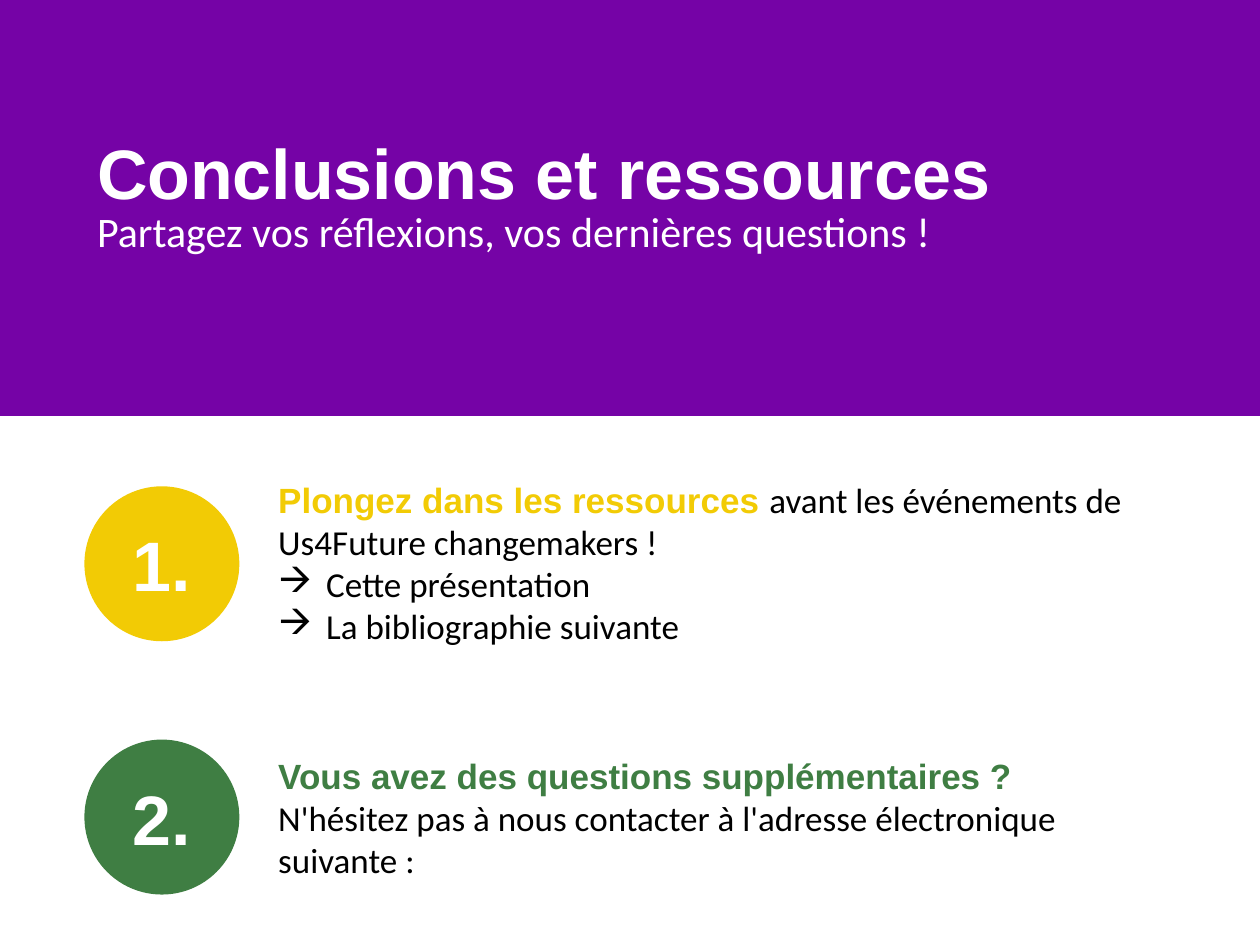
from dataclasses import dataclass

from lxml import etree
from pptx import Presentation
from pptx.dml.color import RGBColor
from pptx.enum.shapes import MSO_SHAPE
from pptx.enum.text import MSO_ANCHOR, MSO_AUTO_SIZE, PP_ALIGN
from pptx.oxml.ns import qn
from pptx.util import Pt

RECTANGLE, OVAL = MSO_SHAPE.RECTANGLE, MSO_SHAPE.OVAL
MIDDLE, TOP = MSO_ANCHOR.MIDDLE, MSO_ANCHOR.TOP
LEFT, CENTER = PP_ALIGN.LEFT, PP_ALIGN.CENTER
NO_FIT, GROW = MSO_AUTO_SIZE.NONE, MSO_AUTO_SIZE.SHAPE_TO_FIT_TEXT
PX = 9144  # 100 px to the inch


@dataclass(frozen=True)
class Theme:
    purple: str = "7503A6"
    yellow: str = "F2CB05"
    green: str = "3F7E43"
    white: str = "FFFFFF"
    black: str = "000000"
    heading: str = "Arial"
    text: str = "Calibri"
    big: int = 40
    subtitle: int = 24
    body: int = 20


theme = Theme()


def px(*lengths):
    return [length * PX for length in lengths]


def add_run(paragraph, text, size, color, bold=False):
    run = paragraph.add_run()
    run.text = text
    run.font.name = theme.heading if bold else theme.text
    run.font.size = Pt(size)
    run.font.bold = bold
    run.font.color.rgb = RGBColor.from_string(color)


prs = Presentation()
prs.slide_width, prs.slide_height = px(1000, 750)
slide = prs.slides.add_slide(prs.slide_layouts[1])
shapes = slide.shapes

# Purple header band, behind the title
band = shapes.add_shape(RECTANGLE, *px(0, 0, 1000, 328))
band.shadow.inherit = False
band.fill.solid()
band.fill.fore_color.rgb = RGBColor.from_string(theme.purple)
band.line.color.rgb = RGBColor.from_string(theme.purple)
band.line.width = Pt(3)
shapes._spTree.insert(2, band._element)

# Title and subtitle
headers = [
    (shapes.title, (67, 68, 846, 145), MIDDLE,
     "Conclusions et ressources", theme.big, True),
    (slide.placeholders[1], (67, 163, 846, 50), TOP,
     "Partagez vos réflexions, vos dernières questions !", theme.subtitle, False),
]
for header, box, anchor, text, size, bold in headers:
    header.left, header.top, header.width, header.height = px(*box)
    frame = header.text_frame
    frame.auto_size = NO_FIT
    frame.vertical_anchor = anchor
    line = frame.paragraphs[0]
    line.alignment = LEFT
    line.line_spacing = 0.9
    line.space_before = Pt(0)
    add_run(line, text, size, theme.white, bold)
    properties = line._p.get_or_add_pPr()
    properties.set("marL", "0")
    properties.set("indent", "0")
    etree.SubElement(properties, qn("a:buNone"))

# Numbered steps: each paragraph is (is bulleted, [(text, is highlighted)])
steps = [
    ("1.", theme.yellow, 386, 375, 145, [
        (False, [("Plongez dans les ressources ", True),
                 ("avant les événements de Us4Future changemakers !", False)]),
        (True, [("Cette présentation", False)]),
        (True, [("La bibliographie suivante", False)]),
    ]),
    ("2.", theme.green, 587, 594, 77, [
        (False, [("Vous avez des questions supplémentaires ?", True)]),
        (False, [("N'hésitez pas à nous contacter à l'adresse électronique "
                  "suivante :", False)]),
    ]),
]
for number, accent, circle_top, text_top, text_height, paragraphs in steps:
    circle = shapes.add_shape(OVAL, *px(67, circle_top, 123, 123))
    circle.shadow.inherit = False
    circle.fill.solid()
    circle.fill.fore_color.rgb = RGBColor.from_string(accent)
    circle.line.fill.background()
    circle.text_frame.vertical_anchor = MIDDLE
    label = circle.text_frame.paragraphs[0]
    label.alignment = CENTER
    add_run(label, number, theme.big, theme.white, True)

    advice = shapes.add_textbox(*px(211, text_top, 722, text_height)).text_frame
    advice.word_wrap = True
    advice.auto_size = GROW
    for index, (bulleted, runs) in enumerate(paragraphs):
        line = advice.add_paragraph() if index else advice.paragraphs[0]
        for text, highlighted in runs:
            add_run(line, text, theme.body,
                    accent if highlighted else theme.black, highlighted)
        if bulleted:
            properties = line._p.get_or_add_pPr()
            properties.set("marL", str(38 * PX))
            properties.set("indent", str(-38 * PX))
            color = etree.SubElement(properties, qn("a:buClr"))
            etree.SubElement(color, qn("a:srgbClr"), val=theme.black)
            etree.SubElement(properties, qn("a:buFont"),
                             typeface="Wingdings", charset="2")
            # Wingdings draws this letter as a right arrow
            etree.SubElement(properties, qn("a:buChar"), char="à")

prs.save("out.pptx")
